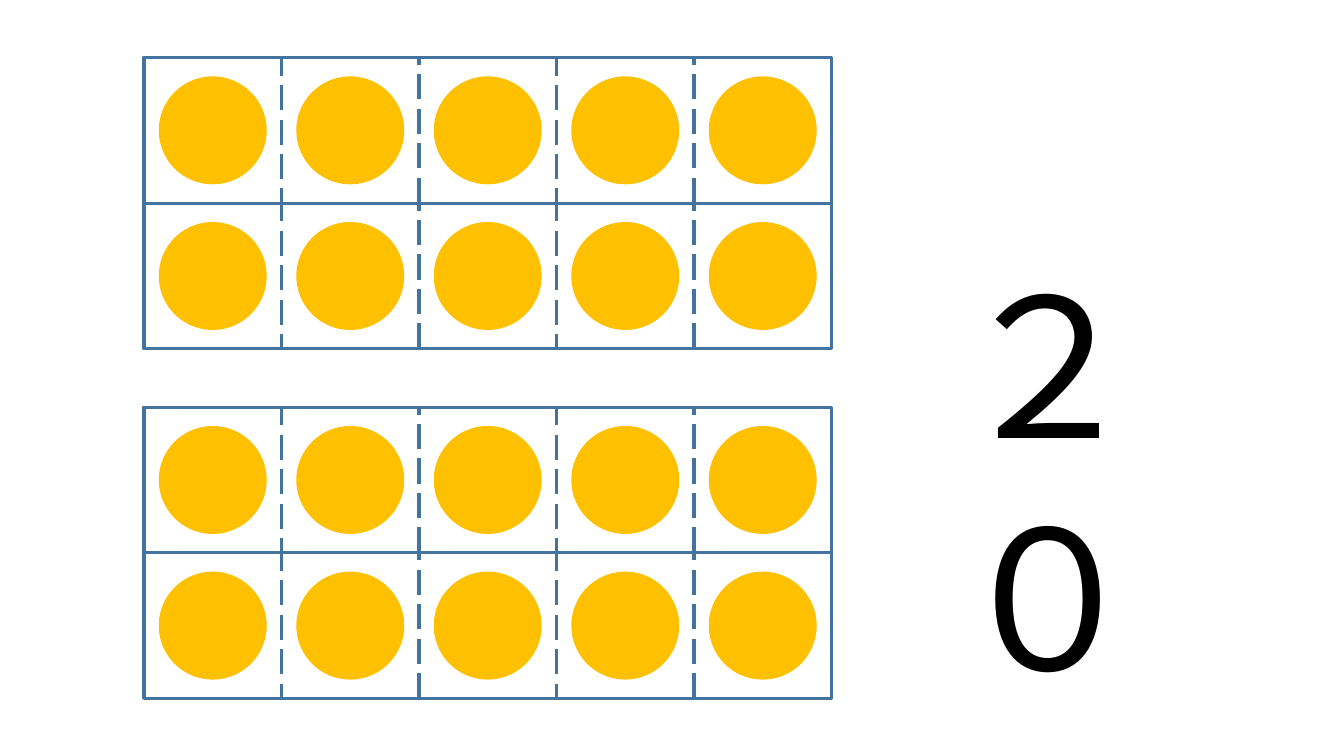
from dataclasses import dataclass
from itertools import product

from pptx import Presentation
from pptx.dml.color import RGBColor
from pptx.enum.dml import MSO_LINE_DASH_STYLE as Dash
from pptx.enum.shapes import MSO_SHAPE as Preset
from pptx.enum.text import MSO_AUTO_SIZE as AutoSize
from pptx.oxml.ns import qn
from pptx.shapes.autoshape import Shape
from pptx.slide import Slide
from pptx.util import Cm, Pt
from lxml.etree import SubElement

FONT = "Noto Sans CJK JP"
BLACK, BLUE, AMBER = "000000", "43739E", "FFC000"

ROWS, COLUMNS = 2, 5
CELL_WIDTH, CELL_HEIGHT = 3.465, 3.67
COUNTER_SIZE = 2.72


@dataclass(frozen=True)
class TenFrame:
    """A two-by-five counting frame; lengths in centimetres."""
    left: float
    top: float

    def cell(self, row: int, column: int) -> tuple[float, float]:
        return self.left + column * CELL_WIDTH, self.top + row * CELL_HEIGHT


TEN_FRAMES = [TenFrame(3.63, 1.45), TenFrame(3.63, 10.26)]


def color(hex_code: str) -> RGBColor:
    return RGBColor.from_string(hex_code)


def add_outline(shapes, left: float, top: float, width: float, dash: Dash) -> Shape:
    shape = shapes.add_shape(Preset.RECTANGLE, Cm(left), Cm(top), Cm(width), Cm(CELL_HEIGHT))
    shape.shadow.inherit = False
    shape.fill.background()
    shape.line.color.rgb = color(BLUE)
    shape.line.width = Pt(2.25)
    shape.line.dash_style = dash
    return shape


def add_grid(slide: Slide, frame: TenFrame) -> None:
    group = slide.shapes.add_group_shape()
    for row in range(ROWS):
        # Every other cell is dashed, which divides the whole row
        for column in range(0, COLUMNS, 2):
            add_outline(group.shapes, *frame.cell(row, column), CELL_WIDTH, Dash.LONG_DASH)
        add_outline(group.shapes, *frame.cell(row, 0), COLUMNS * CELL_WIDTH, Dash.SOLID)


def add_counters(slide: Slide, frame: TenFrame) -> None:
    for row, column in product(range(ROWS), range(COLUMNS)):
        left, top = frame.cell(row, column)
        counter = slide.shapes.add_shape(
            Preset.OVAL,
            Cm(left + (CELL_WIDTH - COUNTER_SIZE) / 2),
            Cm(top + (CELL_HEIGHT - COUNTER_SIZE) / 2),
            Cm(COUNTER_SIZE), Cm(COUNTER_SIZE))
        counter.shadow.inherit = False
        counter.fill.solid()
        counter.fill.fore_color.rgb = color(AMBER)
        counter.line.fill.background()


def add_number(slide: Slide, text: str) -> None:
    text_box = slide.shapes.add_textbox(Cm(23.72), Cm(6.07), Cm(7.52), Cm(6.93))
    text_frame = text_box.text_frame
    text_frame.word_wrap = True
    text_frame.auto_size = AutoSize.SHAPE_TO_FIT_TEXT
    run = text_frame.paragraphs[0].add_run()
    run.text = text
    run.font.size = Pt(138)
    run.font.name = FONT
    run.font.color.rgb = color(BLACK)
    # Full-width digits use the East Asian font
    SubElement(run.font._element, qn("a:ea")).set("typeface", FONT)


def main() -> None:
    presentation = Presentation()
    presentation.slide_width, presentation.slide_height = Cm(33.87), Cm(19.05)
    slide = presentation.slides.add_slide(presentation.slide_layouts[6])

    # Number
    add_number(slide, "２０")

    # Frames, then the counters on top
    for frame in TEN_FRAMES:
        add_grid(slide, frame)
    for frame in TEN_FRAMES:
        add_counters(slide, frame)

    presentation.save("out.pptx")


if __name__ == "__main__":
    main()
